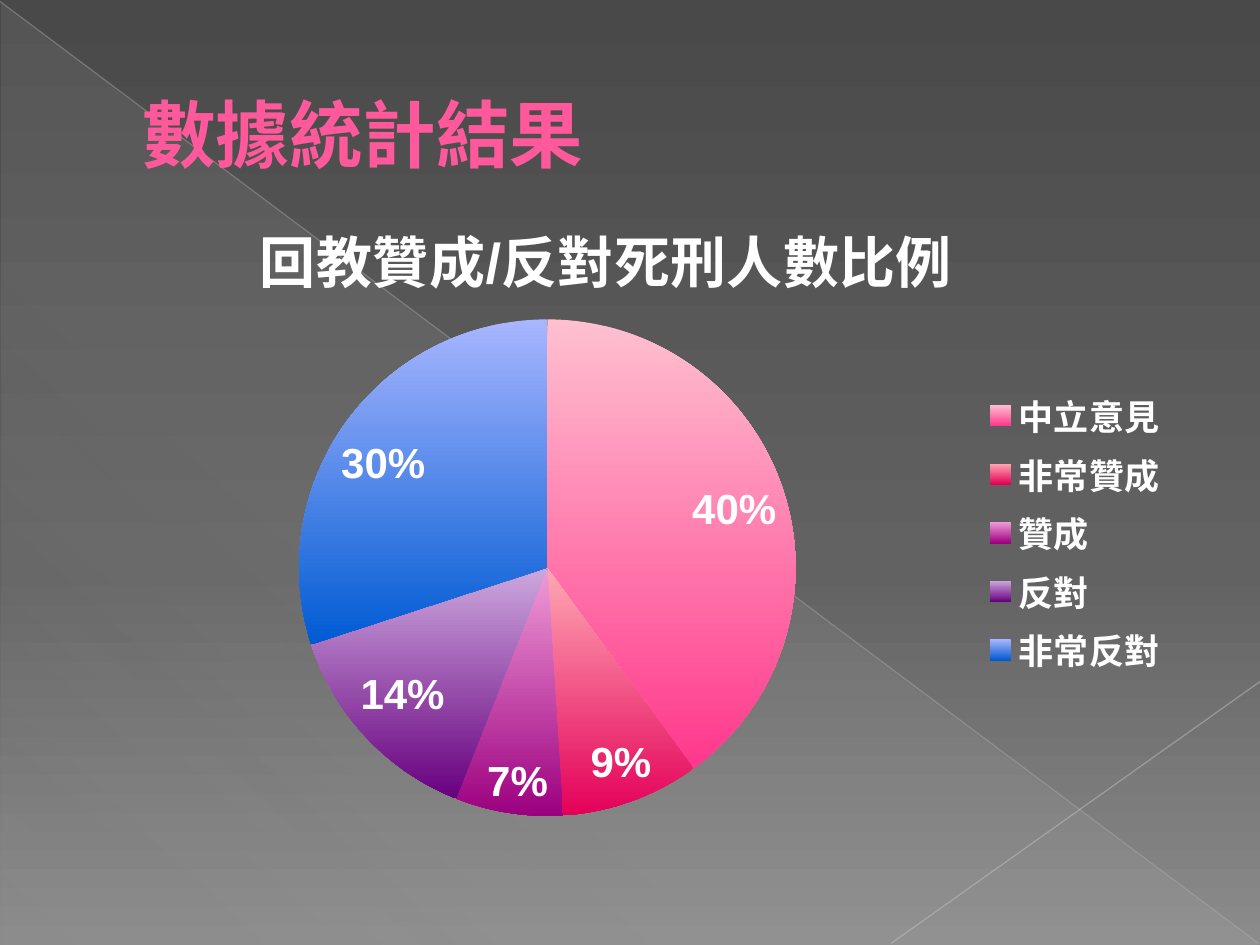
"""Build the survey result slide: a title and a pie chart of opinion shares."""
from lxml.etree import SubElement
from pptx import Presentation
from pptx.chart.data import CategoryChartData
from pptx.dml.color import RGBColor
from pptx.enum.chart import XL_CHART_TYPE as ChartType
from pptx.enum.chart import XL_LABEL_POSITION as LabelPos
from pptx.enum.chart import XL_LEGEND_POSITION as LegendPos
from pptx.enum.shapes import MSO_CONNECTOR as Connector
from pptx.enum.shapes import MSO_SHAPE as Shape
from pptx.enum.text import MSO_ANCHOR as Anchor
from pptx.enum.text import MSO_AUTO_SIZE as AutoSize
from pptx.enum.text import PP_ALIGN as Align
from pptx.oxml.ns import qn
from pptx.util import Cm, Pt

WHITE = RGBColor(0xFF, 0xFF, 0xFF)
PINK = RGBColor(0xFF, 0x59, 0x9C)
LIGHT_GREY = RGBColor(0xD2, 0xD2, 0xD2)
LONG_GREY = RGBColor(0xBE, 0xBE, 0xBE)
SHORT_GREY = RGBColor(0xC5, 0xC5, 0xC5)

HEADING = "數據統計結果"
CHART_TITLE = "回教贊成/反對死刑人數比例"
OPINIONS = [
    ("中立意見", 40, RGBColor(0xFF, 0xC0, 0xD0), RGBColor(0xFF, 0x38, 0x8C), (0, -0.01)),
    ("非常贊成", 9, RGBColor(0xFF, 0xA8, 0xB4), RGBColor(0xE4, 0x00, 0x59), (0.02, -0.01)),
    ("贊成", 7, RGBColor(0xF0, 0x9C, 0xD8), RGBColor(0x9C, 0x00, 0x7F), (-0.02, 0)),
    ("反對", 14, RGBColor(0xCC, 0xA8, 0xDE), RGBColor(0x68, 0x00, 0x7F), (-0.01, -0.02)),
    ("非常反對", 30, RGBColor(0xA8, 0xB6, 0xFF), RGBColor(0x00, 0x5B, 0xD3), (-0.01, 0.02)),
]
BACKDROP = [(0, RGBColor(0x49, 0x49, 0x49), 100),
            (60, RGBColor(0x62, 0x62, 0x62), 100),
            (100, RGBColor(0x8B, 0x8B, 0x8B), 100)]
VEIL = [(0, LIGHT_GREY, 10), (70, LIGHT_GREY, 8), (100, LIGHT_GREY, 1)]
DIAGONALS = [((0, 0.03), (25.37, 19.02), LONG_GREY, 35),
             ((25.4, 13.74), (17.96, 19.02), SHORT_GREY, 45)]
TITLE_BOX = {"left": Cm(1.27), "top": Cm(0.74), "width": Cm(22.86), "height": Cm(3.89)}
TITLE_FRAME = {"vertical_anchor": Anchor.MIDDLE, "auto_size": AutoSize.NONE, "word_wrap": True,
               **{f"margin_{side}": Cm(0.25) for side in ("left", "right", "top", "bottom")}}
TITLE_FONT = {"name": "TeX Gyre Adventor", "size": Pt(42), "bold": True}
CHART_TITLE_FONT, LEGEND_FONT, LABEL_FONT = (
    {"name": "Arial", "size": Pt(size), "bold": True} for size in (32, 20, 24))
LABEL_FORMAT = {"show_percentage": True, "show_value": False, "number_format": "0%",
                "number_format_is_linked": False, "position": LabelPos.INSIDE_END}
CHART_BOX = Cm(1.19), Cm(3.76), Cm(22.63), Cm(14.1)
PIE_AREA = {"x": 0.21, "y": 0.19, "w": 0.45, "h": 0.71}
LEGEND_AREA = {"x": 0.82, "y": 0.28, "w": 0.17, "h": 0.43}
CHART_TITLE_AREA = {"x": 0.17, "y": 0.02}


def apply(target, values):
    for key, value in values.items():
        setattr(target, key, value)


def style_font(font, color, values):
    apply(font, values)
    font.color.rgb = color


def add_alpha(color, percent):
    SubElement(color, qn("a:alpha"), val=str(percent * 1000))


def make_gradient(owner, stops, angle):
    solid = owner.find(".//" + qn("a:solidFill"))
    gradient = solid.makeelement(qn("a:gradFill"), {"rotWithShape": "1"})
    stop_list = SubElement(gradient, qn("a:gsLst"))
    for position, color, opacity in stops:
        stop = SubElement(stop_list, qn("a:gs"), pos=str(position * 1000))
        add_alpha(SubElement(stop, qn("a:srgbClr"), val=str(color)), opacity)
    SubElement(gradient, qn("a:lin"), ang=str(angle * 60000), scaled="0")
    solid.getparent().replace(solid, gradient)


def place(part, area, follower, target=None, mode="edge"):
    for old in part.findall(qn("c:layout")):
        part.remove(old)
    layout = part.makeelement(qn("c:layout"), {})
    manual = SubElement(layout, qn("c:manualLayout"))
    if target:
        SubElement(manual, qn("c:layoutTarget"), val=target)
    for axis in "xy":
        SubElement(manual, qn(f"c:{axis}Mode"), val=mode)
    for key, value in area.items():
        SubElement(manual, qn(f"c:{key}"), val=str(value))
    part.find(qn(follower)).addprevious(layout)


def add_backdrop(slide):
    slide.background.fill.solid()
    make_gradient(slide.element, BACKDROP, 90)
    veil = slide.shapes.add_shape(Shape.RIGHT_TRIANGLE, Cm(0.03), Cm(0.05), Cm(25.35), Cm(19))
    veil.shadow.inherit = False
    veil.line.fill.background()
    veil.fill.solid()
    make_gradient(veil.element, VEIL, 133)
    for start, end, color, opacity in DIAGONALS:
        diagonal = slide.shapes.add_connector(Connector.STRAIGHT, *map(Cm, start + end))
        diagonal.line.width = Pt(0.75)
        diagonal.line.color.rgb = color
        add_alpha(diagonal.element.find(".//" + qn("a:srgbClr")), opacity)
        SubElement(diagonal.element.spPr, qn("a:effectLst"))


def add_heading(slide):
    heading = slide.shapes.title
    slide.shapes.element.append(heading.element)
    apply(heading, TITLE_BOX)
    heading.text_frame.text = HEADING
    apply(heading.text_frame, TITLE_FRAME)
    line = heading.text_frame.paragraphs[0]
    line.alignment = Align.LEFT
    style_font(line.runs[0].font, PINK, TITLE_FONT)
    indent = heading.element.find(".//" + qn("a:pPr"))
    indent.set("marL", str(Cm(1.35)))
    indent.set("indent", "0")


def add_slices(chart):
    opinions = chart.plots[0].series[0]
    labels = opinions.data_labels
    apply(labels, LABEL_FORMAT)
    style_font(labels.font, WHITE, LABEL_FONT)
    for leader in chart.element.iter(qn("c:showLeaderLines")):
        leader.set("val", "0")
    for index, (_, _, light, deep, shift) in enumerate(OPINIONS):
        point = opinions.points[index]
        point.format.line.fill.background()
        point.format.fill.solid()
        point.format.fill.fore_color.rgb = deep
        slice_part = chart.element.findall(".//" + qn("c:dPt"))[index]
        make_gradient(slice_part, [(0, light, 100), (100, deep, 100)], 90)

        style_font(point.data_label.font, WHITE, LABEL_FONT)
        point.data_label.position = LabelPos.INSIDE_END
        label_part = chart.element.findall(".//" + qn("c:dLbl"))[index]
        label_part.find(qn("c:showVal")).set("val", "0")
        label_part.find(qn("c:showPercent")).set("val", "1")
        place(label_part, dict(zip("xy", shift)), "c:txPr", mode="factor")


def add_pie(slide):
    shares = CategoryChartData()
    shares.categories = [opinion[0] for opinion in OPINIONS]
    shares.add_series("Series 1", [opinion[1] for opinion in OPINIONS])
    chart = slide.shapes.add_chart(ChartType.PIE, *CHART_BOX, shares).chart
    apply(chart.font, {"name": "Arial", "size": Pt(18)})
    chart.plots[0].vary_by_categories = True

    chart.has_title = True
    chart.chart_title.text_frame.text = CHART_TITLE
    caption = chart.chart_title.text_frame.paragraphs[0].runs[0]
    style_font(caption.font, WHITE, CHART_TITLE_FONT)
    chart.chart_title.include_in_layout = False

    chart.has_legend = True
    apply(chart.legend, {"position": LegendPos.RIGHT, "include_in_layout": False})
    style_font(chart.legend.font, WHITE, LEGEND_FONT)

    add_slices(chart)
    place(chart.element.find(".//" + qn("c:plotArea")), PIE_AREA, "c:pieChart", target="inner")
    place(chart.element.find(".//" + qn("c:legend")), LEGEND_AREA, "c:overlay")
    place(chart.element.find(".//" + qn("c:title")), CHART_TITLE_AREA, "c:overlay")


def main():
    deck = Presentation()
    apply(deck, {"slide_width": Cm(25.4), "slide_height": Cm(19.05)})
    slide = deck.slides.add_slide(deck.slide_layouts[5])
    add_backdrop(slide)
    add_heading(slide)
    add_pie(slide)
    deck.save("out.pptx")


if __name__ == "__main__":
    main()
